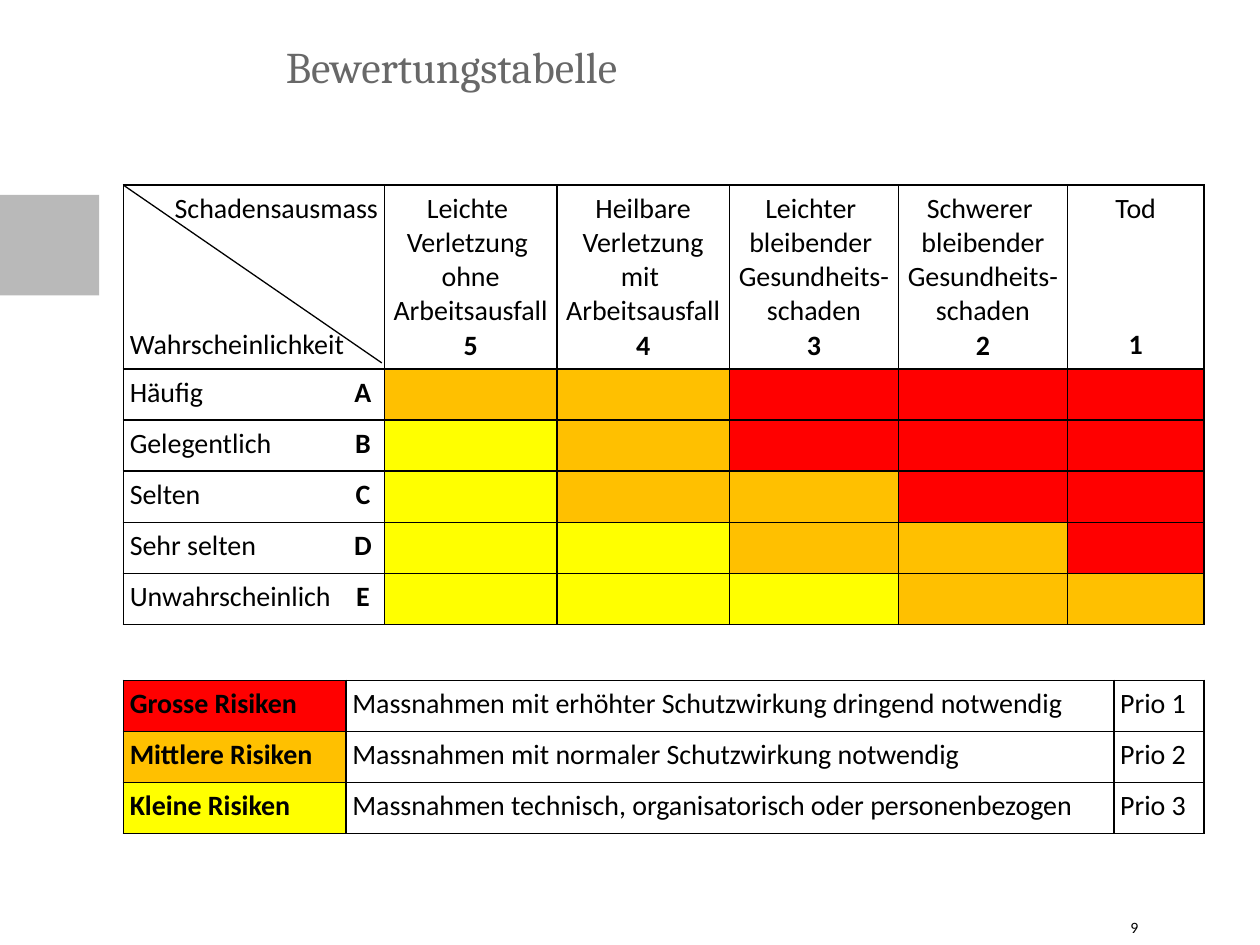
from typing import NamedTuple

from pptx import Presentation
from pptx.dml.color import RGBColor
from pptx.enum.shapes import MSO_CONNECTOR, MSO_SHAPE
from pptx.enum.text import MSO_ANCHOR, PP_ALIGN
from pptx.oxml.ns import qn
from pptx.util import Pt
from lxml.etree import SubElement

COLORS = {"black": "000000", "title": "686868", "accent": "B9B9B9",
          "high": "FF0000", "medium": "FFC000", "low": "FFFF00"}
BODY = {"name": "Calibri", "size": Pt(16), "bold": False}
BOLD = {**BODY, "bold": True}
TITLE = {"name": "Cambria", "size": Pt(25), "bold": False}
PAGE = {"name": "Calibri", "size": Pt(9), "bold": False}
LEFT, CENTER, RIGHT = PP_ALIGN.LEFT, PP_ALIGN.CENTER, PP_ALIGN.RIGHT

TABLE_LEFT = 70.56
MATRIX_TOP = 105.84
LEGEND_TOP = 388.8
ROW_HEIGHT = 29.2
HEADER_HEIGHT = 105
THREE_LINES = 58.6


class Line(NamedTuple):
    text: str
    align: PP_ALIGN = LEFT
    style: dict = BODY
    before: float = 0


class Severity(NamedTuple):
    lines: list[str]
    level: str
    gap: float = 0


class Likelihood(NamedTuple):
    label: str
    letter: str
    risks: list[str]


class Risk(NamedTuple):
    label: str
    color: str
    measure: str
    priority: str


SEVERITIES = [
    Severity(["Leichte \vVerletzung \vohne\vArbeitsausfall"], "5"),
    Severity(["Heilbare\vVerletzung\vmit \vArbeitsausfall"], "4"),
    Severity(["Leichter \vbleibender \vGesundheits-\vschaden"], "3"),
    Severity(["Schwerer ", "bleibender\vGesundheits-\vschaden"], "2"),
    Severity(["Tod"], "1", THREE_LINES),
]
LIKELIHOODS = [
    Likelihood("Häufig", "A", ["medium", "medium", "high", "high", "high"]),
    Likelihood("Gelegentlich", "B", ["low", "medium", "high", "high", "high"]),
    Likelihood("Selten", "C", ["low", "medium", "medium", "high", "high"]),
    Likelihood("Sehr selten", "D", ["low", "low", "medium", "medium", "high"]),
    Likelihood("Unwahrscheinlich", "E", ["low", "low", "low", "medium", "medium"]),
]
RISKS = [
    Risk("Grosse Risiken", "high",
         "Massnahmen mit erhöhter Schutzwirkung dringend notwendig", "Prio 1"),
    Risk("Mittlere Risiken", "medium",
         "Massnahmen mit normaler Schutzwirkung notwendig", "Prio 2"),
    Risk("Kleine Risiken", "low",
         "Massnahmen technisch, organisatorisch oder personenbezogen", "Prio 3"),
]


def rgb(color: str) -> RGBColor:
    return RGBColor.from_string(COLORS[color])


def write(frame, lines: list[Line], color: str = "black") -> None:
    for index, line in enumerate(lines):
        paragraph = frame.paragraphs[0] if index == 0 else frame.add_paragraph()
        paragraph.text = line.text
        paragraph.alignment = line.align
        if line.before:
            paragraph.space_before = Pt(line.before)
        for run in paragraph.runs:
            for attribute, value in line.style.items():
                setattr(run.font, attribute, value)
            run.font.color.rgb = rgb(color)


def clear_margins(frame) -> None:
    for side in ("left", "right", "top", "bottom"):
        setattr(frame, f"margin_{side}", 0)
    frame.vertical_anchor = MSO_ANCHOR.TOP
    frame.word_wrap = True


def format_cell(cell, lines: list[Line], fill: str = "", open_side: str = "") -> None:
    for side in ("left", "right", "top", "bottom"):
        setattr(cell, f"margin_{side}", Pt(3.6))
    write(cell.text_frame, lines)
    # Borders come before the fill in the cell properties
    properties = cell._tc.get_or_add_tcPr()
    for side in "LRTB":
        border = SubElement(properties, qn(f"a:ln{side}"), w=str(Pt(1)))
        if side == open_side:
            SubElement(border, qn("a:noFill"))
        else:
            solid = SubElement(border, qn("a:solidFill"))
            SubElement(solid, qn("a:srgbClr"), val=COLORS["black"])
    if fill:
        cell.fill.solid()
        cell.fill.fore_color.rgb = rgb(fill)
    else:
        cell.fill.background()


def add_grid(slide, top: float, widths: list[float], heights: list[float]):
    table = slide.shapes.add_table(
        len(heights), len(widths), Pt(TABLE_LEFT), Pt(top),
        Pt(sum(widths)), Pt(sum(heights))).table
    table.first_row = table.horz_banding = False
    for column, width in zip(table.columns, widths):
        column.width = Pt(width)
    for row, height in zip(table.rows, heights):
        row.height = Pt(height)
    return table


def add_matrix(slide) -> None:
    matrix = add_grid(slide, MATRIX_TOP, [124.6, 24.5, 98.6, 98.6, 96.6, 96.6, 78],
                      [HEADER_HEIGHT] + [ROW_HEIGHT] * len(LIKELIHOODS))
    # Header row
    format_cell(matrix.cell(0, 0), [Line("Schadensausmass", RIGHT),
                                    Line("Wahrscheinlichkeit", before=THREE_LINES)])
    format_cell(matrix.cell(0, 1), [])
    matrix.cell(0, 0).merge(matrix.cell(0, 1))
    for column, severity in enumerate(SEVERITIES, 2):
        lines = [Line(text, CENTER) for text in severity.lines]
        lines.append(Line(severity.level, CENTER, BOLD, severity.gap))
        format_cell(matrix.cell(0, column), lines)
    # Likelihood rows
    for row, likelihood in enumerate(LIKELIHOODS, 1):
        format_cell(matrix.cell(row, 0), [Line(likelihood.label)], open_side="R")
        format_cell(matrix.cell(row, 1), [Line(likelihood.letter, CENTER, BOLD)],
                    open_side="L")
        for column, risk in enumerate(likelihood.risks, 2):
            format_cell(matrix.cell(row, column), [], risk)


def add_legend(slide) -> None:
    legend = add_grid(slide, LEGEND_TOP, [127.2, 438.8, 51.5],
                      [ROW_HEIGHT] * len(RISKS))
    for row, risk in enumerate(RISKS):
        format_cell(legend.cell(row, 0), [Line(risk.label, style=BOLD)], risk.color)
        format_cell(legend.cell(row, 1), [Line(risk.measure)])
        format_cell(legend.cell(row, 2), [Line(risk.priority)])


def main() -> None:
    presentation = Presentation()
    presentation.slide_width, presentation.slide_height = Pt(720), Pt(540)
    slide = presentation.slides.add_slide(presentation.slide_layouts[5])

    # Title
    title = slide.shapes.title
    title.left, title.top, title.width, title.height = Pt(163.4), Pt(23), Pt(528.5), Pt(40.3)
    clear_margins(title.text_frame)
    write(title.text_frame, [Line("Bewertungstabelle", style=TITLE)], "title")

    # Accent block at the left edge
    accent = slide.shapes.add_shape(MSO_SHAPE.RECTANGLE, 0, Pt(111.4), Pt(56.7), Pt(57.4))
    accent.shadow.inherit = False
    accent.fill.solid()
    accent.fill.fore_color.rgb = rgb("accent")
    accent.line.fill.background()

    add_matrix(slide)
    add_legend(slide)

    # Diagonal of the header corner
    diagonal = slide.shapes.add_connector(
        MSO_CONNECTOR.STRAIGHT, Pt(TABLE_LEFT), Pt(MATRIX_TOP), Pt(218.2), Pt(207.4))
    diagonal.line.color.rgb = rgb("black")
    diagonal.line.width = Pt(0.75)
    SubElement(diagonal._element.spPr, qn("a:effectLst"))

    # Page number
    page = slide.shapes.add_textbox(Pt(646), Pt(524.2), Pt(45.4), Pt(15.8))
    clear_margins(page.text_frame)
    write(page.text_frame, [Line("9", style=PAGE)])

    presentation.save("out.pptx")


if __name__ == "__main__":
    main()
